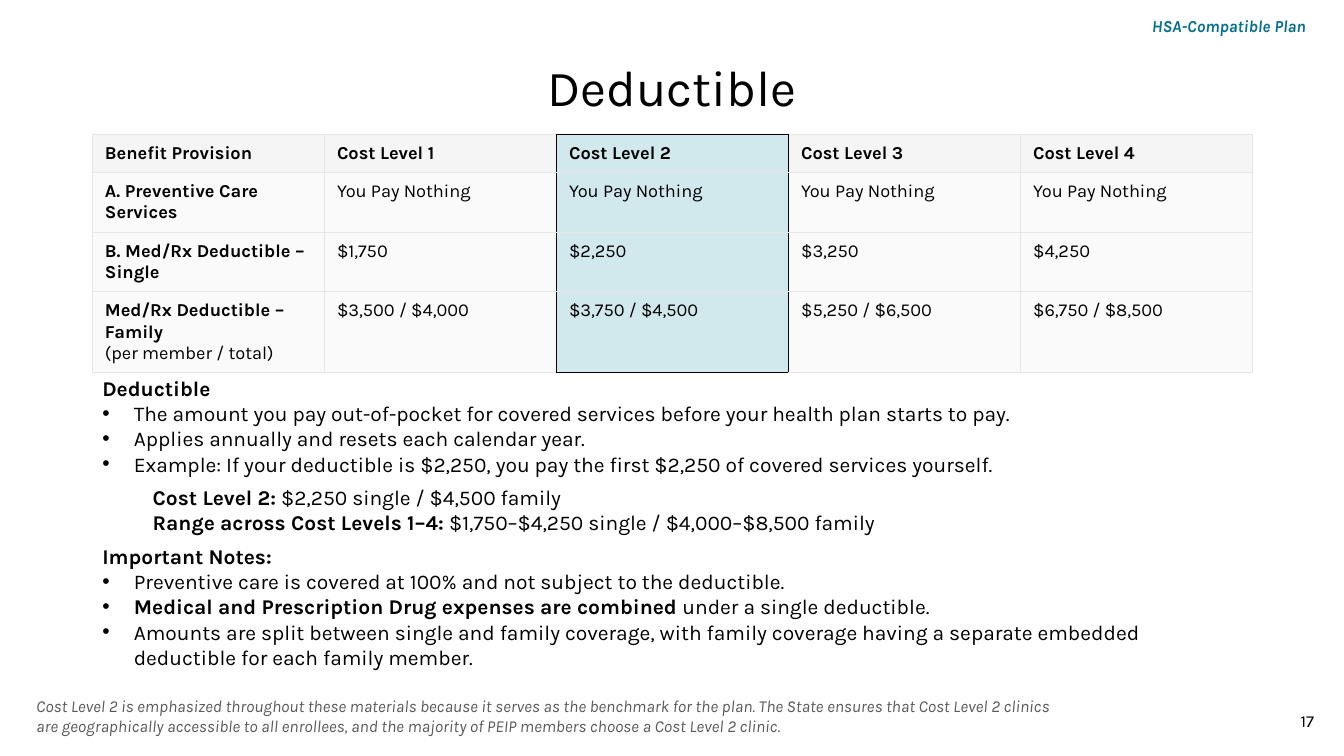
"""Build the Deductible slide of the HSA-compatible plan."""
from dataclasses import dataclass
from typing import NamedTuple

from lxml.etree import SubElement
from pptx import Presentation
from pptx.dml.color import RGBColor
from pptx.enum.text import MSO_ANCHOR as Anchor, PP_ALIGN as Align
from pptx.oxml.ns import qn
from pptx.util import Pt

EMU_PER_PX = 9525
FONT = "Karla"
BLACK = RGBColor(0, 0, 0)
TEAL = RGBColor(0x09, 0x72, 0x8A)
NOTE_GREY = RGBColor(0x59, 0x59, 0x59)
GRID_GREY = RGBColor(0xE6, 0xE6, 0xE6)
HEADER_FILL = RGBColor(0xF5, 0xF5, 0xF5)
BODY_FILL = RGBColor(0xFA, 0xFA, 0xFA)
BENCHMARK_FILL = RGBColor(0xD1, 0xE8, 0xED)
BENCHMARK_COLUMN = 2
COLUMN_WIDTH = 221
ROW_HEIGHTS = (36, 57, 57, 76)


class Box(NamedTuple):
    """Place and size in px."""
    left: int
    top: int
    width: int
    height: int


@dataclass(frozen=True)
class Line:
    """One paragraph: a bold lead, plain text, and its layout."""
    bold: str = ""
    plain: str = ""
    bullet: bool = False
    indent: int = 0
    before: int = 0


TABLE_BOX = Box(88, 128, 5 * COLUMN_WIDTH, sum(ROW_HEIGHTS))

TABLE_ROWS = (
    ("Benefit Provision", "Cost Level 1", "Cost Level 2", "Cost Level 3", "Cost Level 4"),
    ("A. Preventive Care Services",) + ("You Pay Nothing",) * 4,
    ("B. Med/Rx Deductible – Single", "$1,750", "$2,250", "$3,250", "$4,250"),
    ("Med/Rx Deductible – Family", "$3,500 / $4,000", "$3,750 / $4,500",
     "$5,250 / $6,500", "$6,750 / $8,500"),
)

EXPLANATION = (
    Line("Deductible"),
    Line(plain="The amount you pay out-of-pocket for covered services before your "
         "health plan starts to pay.", bullet=True),
    Line(plain="Applies annually and resets each calendar year.", bullet=True),
    Line(plain="Example: If your deductible is $2,250, you pay the first $2,250 of "
         "covered services yourself.", bullet=True),
    Line("Cost Level 2:", " $2,250 single / $4,500 family", indent=48, before=6),
    Line("Range across Cost Levels 1–4:",
         " $1,750–$4,250 single / $4,000–$8,500 family", indent=48),
    Line("Important Notes:", before=6),
    Line(plain="Preventive care is covered at 100% and not subject to the deductible.",
         bullet=True),
    Line("Medical and Prescription Drug expenses are combined",
         " under a single deductible.", bullet=True),
    Line(plain="Amounts are split between single and family coverage, with family "
         "coverage having a separate embedded deductible for each family member.",
         bullet=True),
)

FOOTNOTE = (
    "Cost Level 2 is emphasized throughout these materials because it serves as the "
    "benchmark for the plan. The State ensures that Cost Level 2 clinics are "
    "geographically accessible to all enrollees, and the majority of PEIP members "
    "choose a Cost Level 2 clinic."
)


def px(length: int) -> int:
    """Turn px into EMU."""
    return length * EMU_PER_PX


def write(frame, *lines: Line, size: int, color: RGBColor = BLACK, italic: bool = False,
          align: Align = Align.LEFT, spacing: float = 1.0) -> None:
    """Write lines into a text frame with one format."""
    for index, line in enumerate(lines):
        paragraph = frame.paragraphs[0] if index == 0 else frame.add_paragraph()
        paragraph.alignment = align
        paragraph.line_spacing = spacing
        if line.before:
            paragraph.space_before = Pt(line.before)
        properties = paragraph._p.get_or_add_pPr()
        if line.bullet:
            properties.set("marL", str(px(30)))
            properties.set("indent", str(px(-30)))
            SubElement(properties, qn("a:buFont"), typeface="Arial")
            SubElement(properties, qn("a:buChar"), char="•")
        elif line.indent:
            properties.set("marL", str(px(line.indent)))
        for text, bold in ((line.bold, True), (line.plain, False)):
            if text:
                run = paragraph.add_run()
                run.text = text
                font = run.font
                font.name, font.size = FONT, Pt(size)
                font.bold, font.italic = bold, italic
                font.color.rgb = color


def add_text(slide, box: Box, *lines: Line, anchor: Anchor = Anchor.TOP, **text_format) -> None:
    """Add a wrapping text box."""
    frame = slide.shapes.add_textbox(*map(px, box)).text_frame
    frame.word_wrap = True
    frame.vertical_anchor = anchor
    write(frame, *lines, **text_format)


def add_border(cell, side: str, color: RGBColor, width: float) -> None:
    """Draw one side of a cell."""
    border = SubElement(cell._tc.get_or_add_tcPr(), qn(f"a:ln{side}"), w=str(Pt(width)))
    fill = SubElement(border, qn("a:solidFill"))
    SubElement(fill, qn("a:srgbClr"), val=str(color))


def black_sides(row: int, column: int) -> str:
    """Name the sides of a cell that outline the benchmark column."""
    if column == BENCHMARK_COLUMN:
        top = "T" if row == 0 else ""
        bottom = "B" if row == len(TABLE_ROWS) - 1 else ""
        return "LR" + top + bottom
    return {BENCHMARK_COLUMN - 1: "R", BENCHMARK_COLUMN + 1: "L"}.get(column, "")


def format_cell(cell, row: int, column: int) -> None:
    """Set margins, borders and fill of a cell."""
    cell.margin_left, cell.margin_right = px(12), px(8)
    cell.margin_top, cell.margin_bottom = px(8), px(6)
    for side in "LRTB":
        outlined = side in black_sides(row, column)
        add_border(cell, side, *((BLACK, 1) if outlined else (GRID_GREY, 0.75)))
    cell.fill.solid()
    if column == BENCHMARK_COLUMN:
        cell.fill.fore_color.rgb = BENCHMARK_FILL
    else:
        cell.fill.fore_color.rgb = BODY_FILL if row else HEADER_FILL


def add_cost_table(slide) -> None:
    """Add the table of deductibles by cost level."""
    table = slide.shapes.add_table(len(TABLE_ROWS), len(TABLE_ROWS[0]),
                                   *map(px, TABLE_BOX)).table
    table.first_row = table.horz_banding = False
    for table_column in table.columns:
        table_column.width = px(COLUMN_WIDTH)
    for row, texts in enumerate(TABLE_ROWS):
        table.rows[row].height = px(ROW_HEIGHTS[row])
        for column, text in enumerate(texts):
            cell = table.cell(row, column)
            format_cell(cell, row, column)
            lines = [Line(text) if row == 0 or column == 0 else Line(plain=text)]
            if text.endswith("Family"):
                lines.append(Line(plain="(per member / total)"))
            write(cell.text_frame, *lines, size=13)


def main() -> None:
    """Build and save the slide."""
    presentation = Presentation()
    presentation.slide_width, presentation.slide_height = px(1280), px(720)
    slide = presentation.slides.add_slide(presentation.slide_layouts[6])
    add_text(slide, Box(88, 16, 1104, 139), Line(plain="Deductible"), size=36,
             align=Align.CENTER, anchor=Anchor.MIDDLE, spacing=0.9)
    add_text(slide, Box(973, 667, 288, 38), Line(plain="17"), size=12,
             align=Align.RIGHT, anchor=Anchor.MIDDLE)
    add_text(slide, Box(88, 353, 1046, 322), *EXPLANATION, size=15)
    add_text(slide, Box(1078, 10, 185, 29), Line("HSA-Compatible Plan"), size=12,
             color=TEAL, italic=True, align=Align.CENTER)
    add_cost_table(slide)
    add_text(slide, Box(25, 658, 986, 48), Line(plain=FOOTNOTE), size=12,
             color=NOTE_GREY, italic=True)
    presentation.save("out.pptx")


if __name__ == "__main__":
    main()
